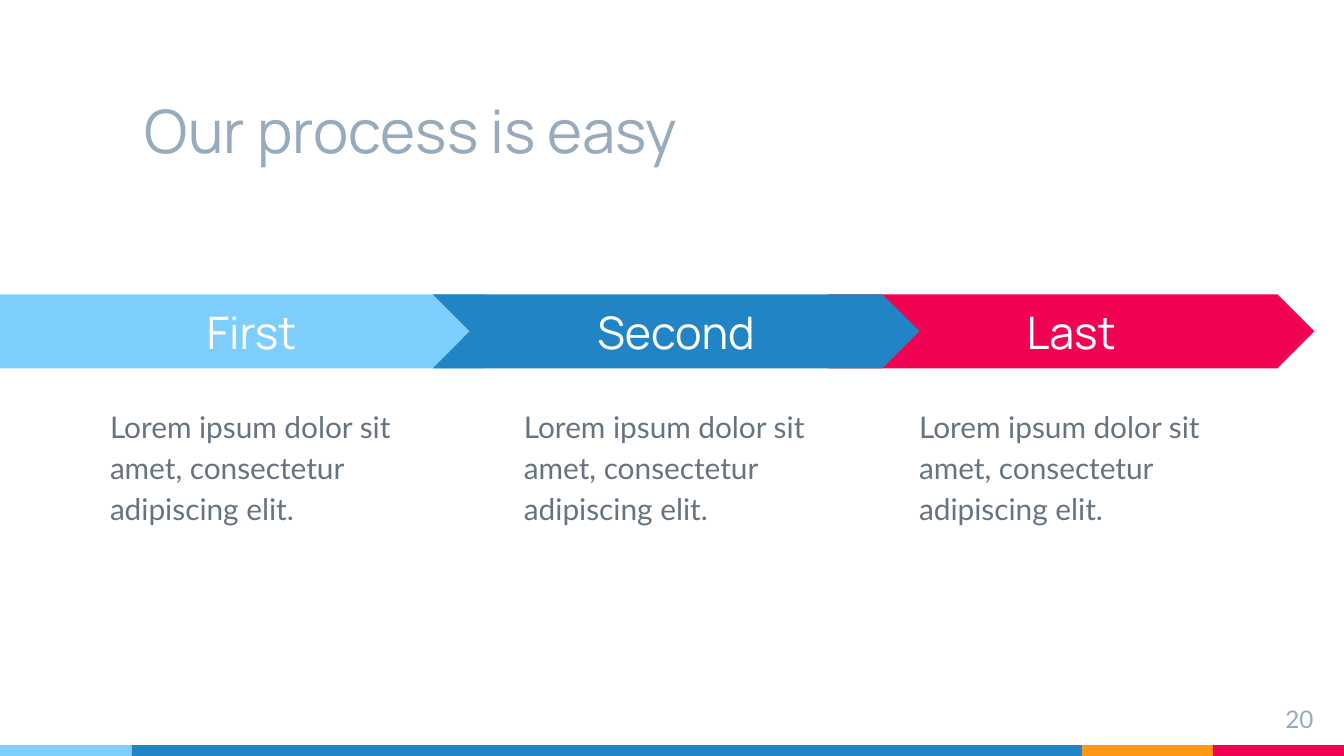
from pptx import Presentation
from pptx.dml.color import RGBColor
from pptx.enum.shapes import MSO_SHAPE
from pptx.enum.text import MSO_ANCHOR, PP_ALIGN
from pptx.util import Inches, Pt

RECT, PLATE, CHEVRON = MSO_SHAPE.RECTANGLE, MSO_SHAPE.PENTAGON, MSO_SHAPE.CHEVRON
TOP, MIDDLE, BOTTOM = MSO_ANCHOR.TOP, MSO_ANCHOR.MIDDLE, MSO_ANCHOR.BOTTOM
LEFT, CENTER, RIGHT = PP_ALIGN.LEFT, PP_ALIGN.CENTER, PP_ALIGN.RIGHT

THEME = {
    "sky": "7ECEFD", "blue": "2185C5", "orange": "FF9715", "red": "F20253",
    "white": "FFFFFF",
    # text styles: font, size, colour
    "title": ("Manrope", 32, "97ABBC"),
    "step": ("Manrope", 24, "FFFFFF"),
    "body": ("Lato", 16, "677480"),
    "number": ("Lato", 13, "97ABBC"),
}

TITLE = "Our process is easy"
PAGE = "20"
BODY = "Lorem ipsum dolor sit amet, consectetur adipiscing elit."
# label, arrow shape, colour, arrow left, arrow width, body left; back to front
STEPS = [
    ("Last", CHEVRON, "red", 6.16, 3.62, 6.74),
    ("First", PLATE, "sky", 0, 3.88, 0.72),
    ("Second", CHEVRON, "blue", 3.22, 3.62, 3.8),
]

W = 10
H = W * 9 / 16
MARGIN = 0.98
MAIN = 7.07
STRIPE_H = 0.08
STRIPES = [("sky", MARGIN), ("blue", MAIN),
           ("orange", (W - MARGIN - MAIN) / 2), ("red", (W - MARGIN - MAIN) / 2)]
ARROW_TOP, ARROW_H = 2.19, 0.55
BODY_TOP, BODY_W, BODY_H = 2.9, 2.45, 2.15


def write(shape, text, style, align=LEFT, anchor=TOP, spacing=None):
    tf = shape.text_frame
    tf.word_wrap = True
    tf.vertical_anchor = anchor
    tf.margin_left = tf.margin_right = tf.margin_top = tf.margin_bottom = Inches(0.1)
    p = tf.paragraphs[0]
    p.alignment = align
    if spacing:
        p.line_spacing = spacing
    r = p.add_run()
    r.text = text
    name, size, color = THEME[style]
    r.font.name, r.font.size = name, Pt(size)
    r.font.color.rgb = RGBColor.from_string(color)


def add_block(shapes, kind, box, color):
    sp = shapes.add_shape(kind, *map(Inches, box))
    sp.shadow.inherit = False
    sp.fill.solid()
    sp.fill.fore_color.rgb = RGBColor.from_string(THEME[color])
    sp.line.fill.background()
    return sp


def add_text(shapes, box, *args, **kwargs):
    write(shapes.add_textbox(*map(Inches, box)), *args, **kwargs)


def add_step(s, label, kind, color, left, width, body_left):
    group = s.shapes.add_group_shape().shapes
    arrow = add_block(group, kind, (left, ARROW_TOP, width, ARROW_H), color)
    arrow.adjustments[0] = 0.5
    write(arrow, label, "step", CENTER, MIDDLE)
    add_text(group, (body_left, BODY_TOP, BODY_W, BODY_H), BODY, "body", spacing=1.15)


def main():
    prs = Presentation()
    prs.slide_width, prs.slide_height = Inches(W), Inches(H)
    s = prs.slides.add_slide(prs.slide_layouts[6])
    s.background.fill.solid()
    s.background.fill.fore_color.rgb = RGBColor.from_string(THEME["white"])

    x = 0
    for color, width in STRIPES:
        add_block(s.shapes, RECT, (x, H - STRIPE_H, width, STRIPE_H), color)
        x += width

    add_text(s.shapes, (MARGIN, 0.39, MAIN, 0.94), TITLE, "title", anchor=BOTTOM)
    for step in STEPS:
        add_step(s, *step)
    add_text(s.shapes, (9.27, 5.14, 0.6, 0.34), PAGE, "number", RIGHT)
    prs.save("out.pptx")


if __name__ == "__main__":
    main()
